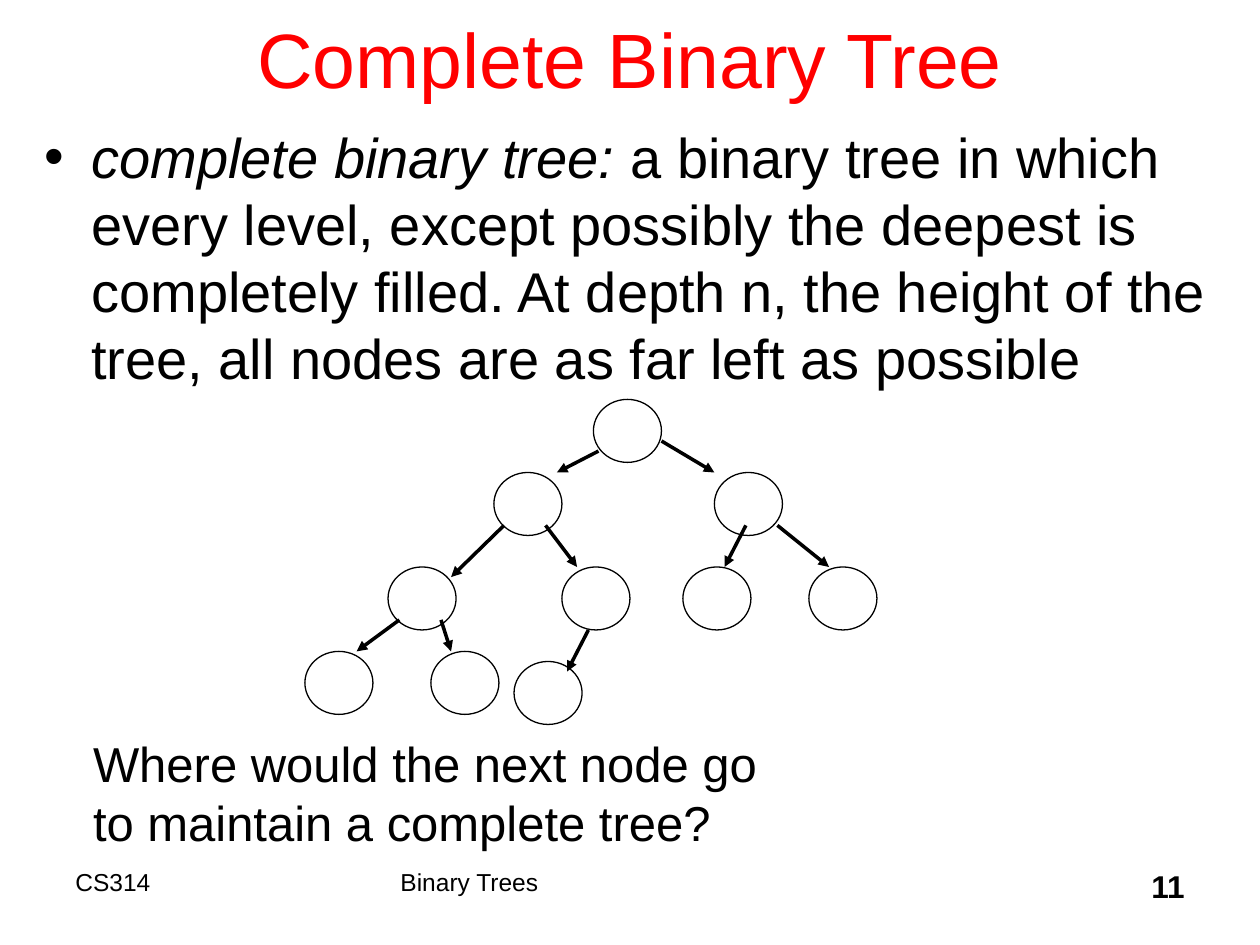
from pptx import Presentation
from pptx.dml.color import RGBColor
from pptx.enum.shapes import MSO_CONNECTOR, MSO_SHAPE
from pptx.enum.text import MSO_ANCHOR, MSO_AUTO_SIZE, PP_ALIGN
from pptx.oxml.ns import qn
from pptx.util import Inches, Pt
from lxml.etree import SubElement

FONT = "Arial"
COLORS = {"ink": "000000", "title": "FF0000", "back": "FFFFFF"}

# Node corners, level by level
NODE_W, NODE_H = 0.54, 0.5
NODES = [
    (4.71, 3.17),
    (3.92, 3.75), (5.67, 3.75),
    (3.08, 4.5), (4.46, 4.5), (5.42, 4.5), (6.42, 4.5),
    (2.42, 5.17), (3.42, 5.17), (4.08, 5.25),
]

# Arrow ends from parent to child
EDGES = [
    ((4.75, 3.58), (4.42, 3.75)), ((5.25, 3.5), (5.67, 3.75)),
    ((4, 4.17), (3.58, 4.58)), ((4.33, 4.17), (4.58, 4.5)),
    ((5.92, 4.17), (5.75, 4.5)), ((6.17, 4.17), (6.58, 4.5)),
    ((3.17, 4.92), (2.83, 5.17)), ((3.5, 4.92), (3.58, 5.17)),
    ((4.67, 5), (4.5, 5.33)),
]


def color(name):
    return RGBColor.from_string(COLORS[name])


def add_run(para, text, size, ink="ink", bold=False, italic=False):
    run = para.add_run()
    run.text = text
    font = run.font
    font.name, font.size = FONT, Pt(size)
    font.bold, font.italic = bold, italic
    font.color.rgb = color(ink)


def place(shape, left, top, width, height):
    shape.left, shape.top = Inches(left), Inches(top)
    shape.width, shape.height = Inches(width), Inches(height)


def fill_holder(holder, box, anchor, runs):
    place(holder, *box)
    frame = holder.text_frame
    frame.auto_size = MSO_AUTO_SIZE.NONE
    frame.vertical_anchor = anchor
    for text, style in runs:
        add_run(frame.paragraphs[0], text, **style)


def add_text(slide, box, lines, size, align=PP_ALIGN.LEFT, bold=False, wrap=True):
    frame = slide.shapes.add_textbox(*map(Inches, box)).text_frame
    frame.word_wrap = wrap
    para = frame.paragraphs[0]
    para.alignment = align
    for i, line in enumerate(lines):
        if i:
            para.add_line_break()
        add_run(para, line, size, bold=bold)
    return frame


def add_node(slide, left, top):
    node = slide.shapes.add_shape(
        MSO_SHAPE.OVAL, *map(Inches, (left, top, NODE_W, NODE_H)))
    node.shadow.inherit = False
    node.fill.background()
    node.line.color.rgb = color("ink")
    node.line.width = Pt(0.75)


def add_arrow(slide, start, end):
    arrow = slide.shapes.add_connector(
        MSO_CONNECTOR.STRAIGHT, *map(Inches, start + end))
    arrow.line.color.rgb = color("ink")
    arrow.line.width = Pt(2)
    props = arrow._element.spPr
    SubElement(props.find(qn("a:ln")), qn("a:tailEnd"), type="triangle")
    SubElement(props, qn("a:effectLst"))


def main():
    deck = Presentation()
    deck.slide_width, deck.slide_height = Inches(10), Inches(7.5)
    slide = deck.slides.add_slide(deck.slide_layouts[1])
    back = slide.background.fill
    back.solid()
    back.fore_color.rgb = color("back")

    # Title and definition
    title, body = slide.placeholders
    fill_holder(title, (0.75, -0.17, 8.5, 1.25), MSO_ANCHOR.MIDDLE,
                [("Complete Binary Tree", {"size": 44, "ink": "title"})])
    fill_holder(body, (0.25, 0.92, 9.5, 6), MSO_ANCHOR.TOP, [
        ("complete binary tree:", {"size": 32, "italic": True}),
        (" a binary tree in which every level, except possibly the deepest "
         "is completely filled. At depth n, the height of the tree, all "
         "nodes are as far left as possible", {"size": 32}),
    ])

    # Tree
    for node in NODES:
        add_node(slide, *node)
    for start, end in EDGES:
        add_arrow(slide, start, end)

    # Question
    ask = add_text(slide, (0.64, 5.77, 5.49, 1.03),
                   ["Where would the next node go", "to maintain a complete tree?"],
                   28, wrap=False)
    ask.auto_size = MSO_AUTO_SIZE.SHAPE_TO_FIT_TEXT
    ask.paragraphs[0].space_before = Pt(5.6)

    # Footer
    add_text(slide, (0.5, 6.83, 2.5, 0.5), ["CS314"], 14)
    add_text(slide, (3.08, 6.83, 3.83, 0.5), ["Binary Trees"], 14)
    add_text(slide, (7.42, 6.83, 2.08, 0.5), ["11"], 18, PP_ALIGN.RIGHT, bold=True)

    deck.save("out.pptx")


if __name__ == "__main__":
    main()
